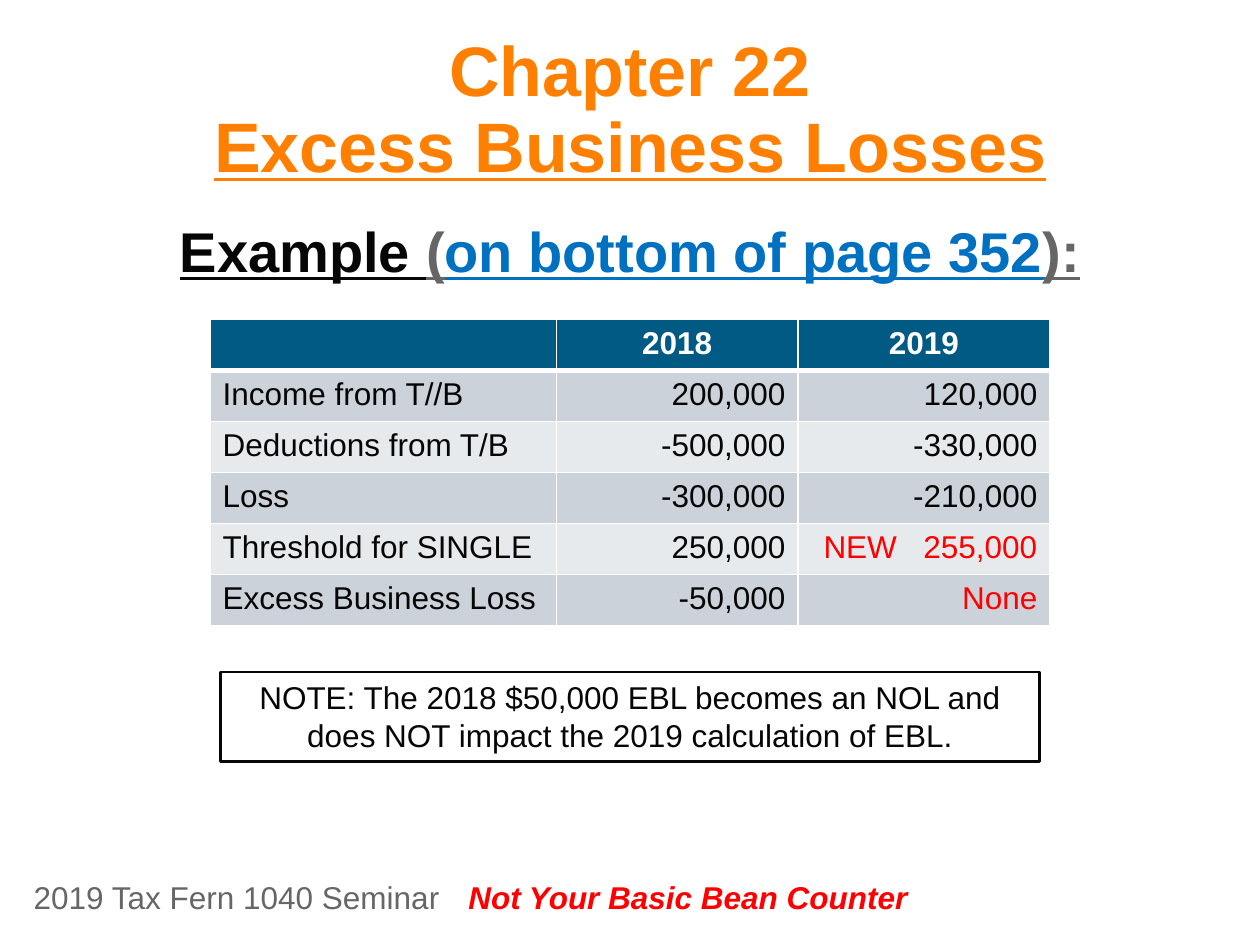
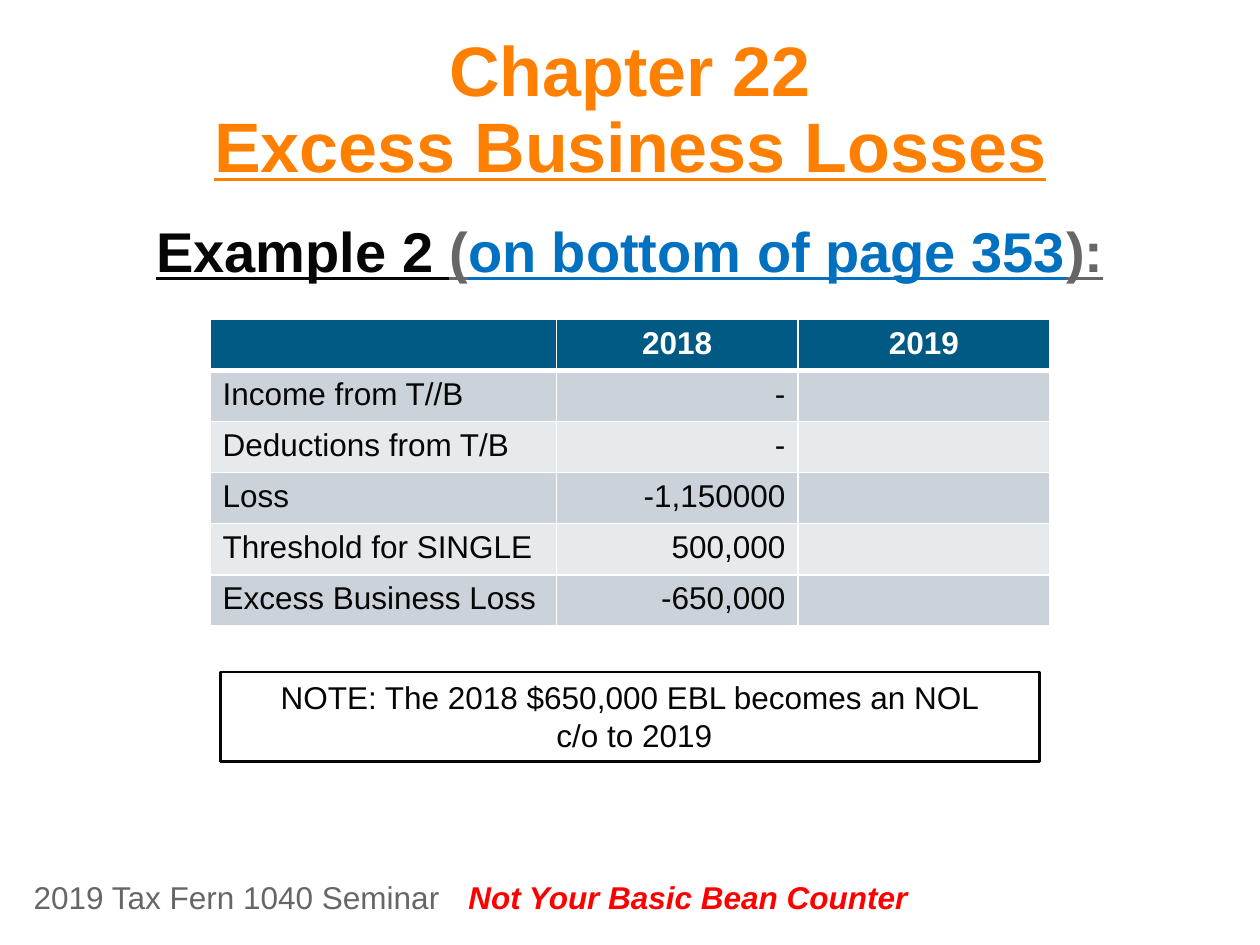
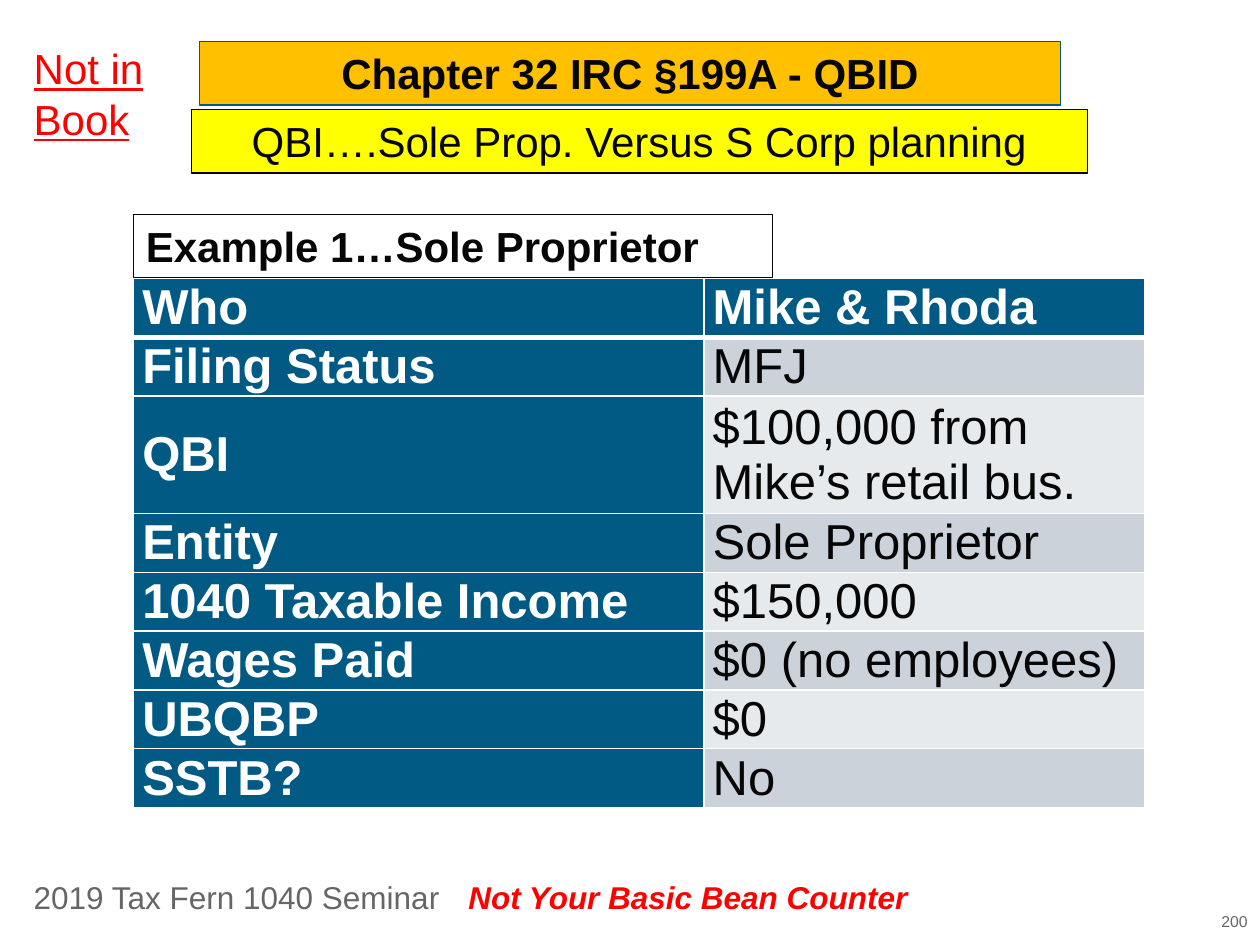
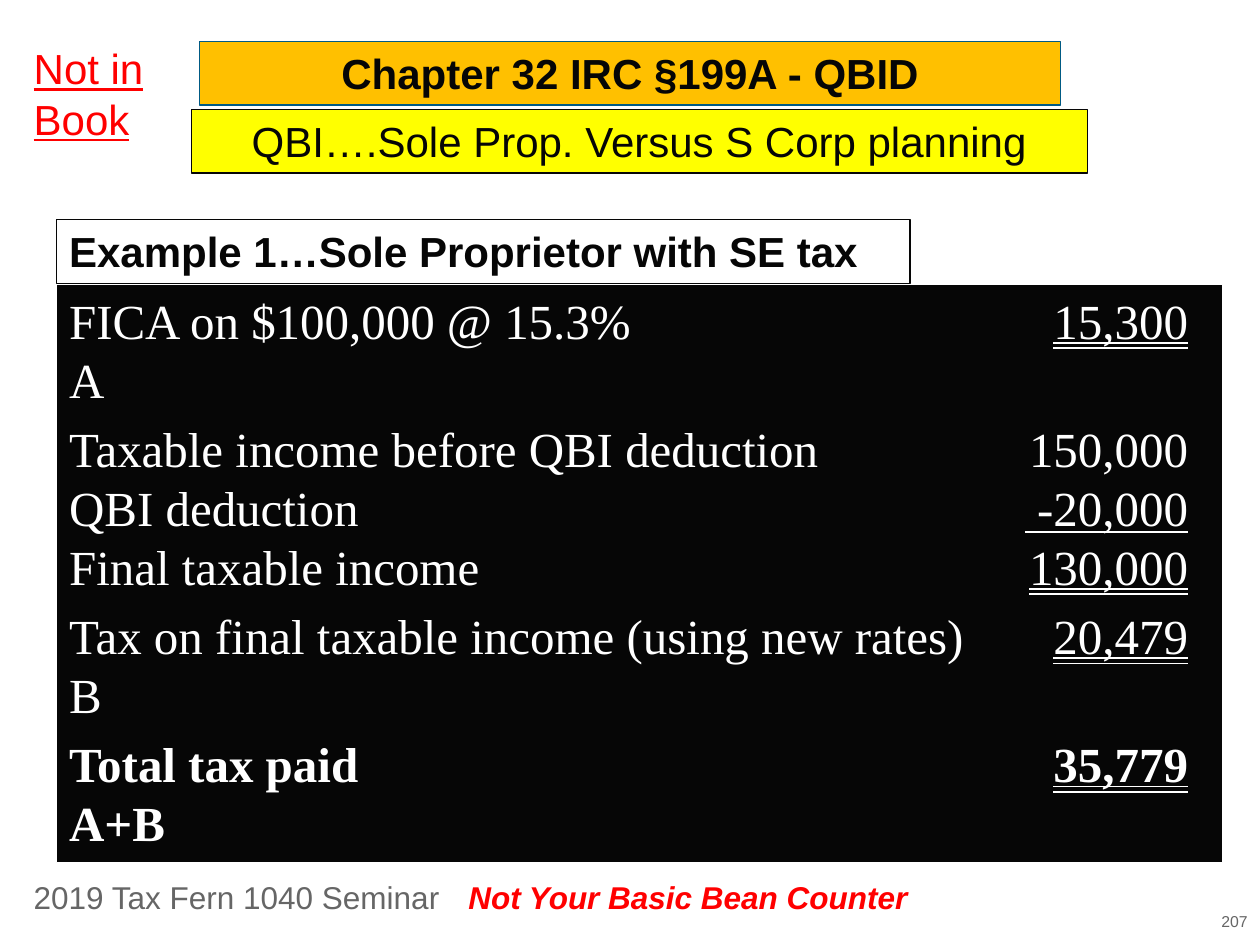
from itertools import cycle

from lxml import etree
from pptx import Presentation
from pptx.dml.color import RGBColor
from pptx.enum import shapes, text
from pptx.oxml import ns
from pptx.util import Pt

BLACK = RGBColor(0x06, 0x06, 0x06)
WHITE = RGBColor(0xFF, 0xFF, 0xFF)
GREY = RGBColor(0x66, 0x66, 0x66)
RED = RGBColor(0xFF, 0x00, 0x00)
ORANGE = RGBColor(0xFF, 0x80, 0x00)
AMBER = RGBColor(0xFF, 0xC0, 0x00)
YELLOW = RGBColor(0xFF, 0xFF, 0x00)
BLUE = RGBColor(0x00, 0x70, 0xC0)
NAVY = RGBColor(0x00, 0x5A, 0x84)
BAND_DARK = RGBColor(0xCC, 0xD2, 0xD9)
BAND_LIGHT = RGBColor(0xE7, 0xEA, 0xED)

LEFT, CENTER, RIGHT = (text.PP_ALIGN.LEFT, text.PP_ALIGN.CENTER,
                       text.PP_ALIGN.RIGHT)
TOP, MIDDLE, BOTTOM = (text.MSO_ANCHOR.TOP, text.MSO_ANCHOR.MIDDLE,
                       text.MSO_ANCHOR.BOTTOM)
SINGLE = text.MSO_UNDERLINE.SINGLE_LINE
DOUBLE = text.MSO_UNDERLINE.DOUBLE_LINE
TITLE_ONLY = 5


def add_run(paragraph, words, size=18, color=BLACK, font="Arial", bold=False,
            italic=False, underline=False):
    for number, line in enumerate(words.split("\n")):
        if number:
            paragraph.add_line_break()
        if line:
            run = paragraph.add_run()
            run.text = line
            run.font.name, run.font.size = font, Pt(size)
            run.font.color.rgb = color
            run.font.bold, run.font.italic = bold, italic
            run.font.underline = underline


def write(frame, *paragraphs, align=LEFT, after=(0,), spacing=None, tabs=(),
          **style):
    """Fill a text frame; a paragraph is a string or a list of (words, style)."""
    for number, (content, gap) in enumerate(zip(paragraphs, cycle(after))):
        paragraph = frame.add_paragraph() if number else frame.paragraphs[0]
        if tabs:
            stops = etree.SubElement(paragraph._p.get_or_add_pPr(),
                                     ns.qn("a:tabLst"))
            for position, kind in tabs:
                etree.SubElement(stops, ns.qn("a:tab"),
                                 pos=str(Pt(position)), algn=kind)
        paragraph.alignment = align
        paragraph.space_before, paragraph.space_after = Pt(0), Pt(gap)
        if spacing:
            paragraph.line_spacing = spacing
        runs = [(content, {})] if isinstance(content, str) else content
        for words, change in runs:
            add_run(paragraph, words, **{**style, **change})


def set_frame(shape, anchor=TOP, insets=(7.2, 3.6)):
    frame = shape.text_frame
    frame.word_wrap = True
    frame.auto_size = text.MSO_AUTO_SIZE.NONE
    frame.vertical_anchor = anchor
    frame.margin_left = frame.margin_right = Pt(insets[0])
    frame.margin_top = frame.margin_bottom = Pt(insets[1])
    return frame


def paint(shape, fill, line, width):
    if fill is None:
        shape.fill.background()
    else:
        shape.fill.solid()
        shape.fill.fore_color.rgb = fill
    shape.line.color.rgb, shape.line.width = line, Pt(width)


def add_label(slide, box, *paragraphs, **style):
    label = slide.shapes.add_textbox(*map(Pt, box))
    write(set_frame(label), *paragraphs, **style)


def add_panel(slide, box, *paragraphs, fill=None, line=BLACK, width=0.75,
              **style):
    panel = slide.shapes.add_shape(shapes.MSO_SHAPE.RECTANGLE, *map(Pt, box))
    panel.shadow.inherit = False
    paint(panel, fill, line, width)
    write(set_frame(panel), *paragraphs, **style)


def place_title(slide, box, *paragraphs, anchor=TOP, insets=(7.2, 3.6),
                **style):
    title = slide.shapes.title
    title.left, title.top, title.width, title.height = map(Pt, box)
    write(set_frame(title, anchor, insets), *paragraphs, align=CENTER,
          bold=True, **style)
    return title


def format_cell(cell, fill, top=1, bottom=1):
    """Give a cell white borders, then its fill, which must follow them."""
    properties = cell._tc.get_or_add_tcPr()
    for side, width in zip("LRTB", (1, 1, top, bottom)):
        border = etree.SubElement(properties, ns.qn(f"a:ln{side}"),
                                  w=str(Pt(width)))
        solid = etree.SubElement(border, ns.qn("a:solidFill"))
        etree.SubElement(solid, ns.qn("a:srgbClr"), val=str(WHITE))
    cell.fill.solid()
    cell.fill.fore_color.rgb = fill


def add_grid(slide, left, top, widths, heights, header_column=False):
    """Add a banded table with a navy header row, and return it."""
    table = slide.shapes.add_table(
        len(heights), len(widths), Pt(left), Pt(top),
        Pt(sum(widths)), Pt(sum(heights))).table
    table.first_col = header_column
    for column, width in zip(table.columns, widths):
        column.width = Pt(width)
    for r, height in enumerate(heights):
        table.rows[r].height = Pt(height)
        for c in range(len(widths)):
            if r == 0 or (header_column and c == 0):
                fill = NAVY
            else:
                fill = BAND_DARK if r % 2 else BAND_LIGHT
            format_cell(table.cell(r, c), fill, top=3 if r == 1 else 1,
                        bottom=1 if r else 3)
    return table


def new_slide(deck):
    """Add a title-only slide with the seminar footer."""
    slide = deck.slides.add_slide(deck.slide_layouts[TITLE_ONLY])
    add_label(slide, (12.2, 498.2, 246, 29), "2019 Tax Fern 1040 Seminar",
              color=GREY)
    add_label(slide, (260.6, 498.2, 268.6, 29), "Not Your Basic Bean Counter",
              color=RED, bold=True, italic=True)
    return slide


def add_loss_table(slide, left, top, amounts):
    labels = ("Income from T//B", "Deductions from T/B", "Loss",
              "Threshold for SINGLE", "Excess Business Loss")
    table = add_grid(slide, left, top, (198, 138, 144), [29.16] * 6)
    for c, year in enumerate(("2018", "2019"), start=1):
        write(table.cell(0, c).text_frame, year, align=CENTER, color=WHITE,
              bold=True)
    for r, (label, values) in enumerate(zip(labels, amounts), start=1):
        write(table.cell(r, 0).text_frame, label)
        for c, value in enumerate(values, start=1):
            is_new = "NEW" in value
            write(table.cell(r, c).text_frame, value,
                  align=LEFT if is_new else RIGHT,
                  tabs=((7.4, "l"), (129.5, "r")) if is_new else (),
                  color=RED if is_new or value == "None" else BLACK)


def losses_slide(deck, example, page, amounts, *note):
    slide = new_slide(deck)
    place_title(slide, (48, 12, 624, 95),
                [("Chapter 22\n", {}),
                 ("Excess Business Losses", {"underline": SINGLE})],
                anchor=BOTTOM, insets=(0, 0), spacing=0.9, size=40,
                color=ORANGE)
    add_label(slide, (57, 120, 606, 46),
              [(f"{example} ", {}), ("(", {"color": GREY}),
               (f"on bottom of page {page}", {"color": BLUE}),
               ("):", {"color": GREY})],
              align=CENTER, size=32, bold=True, underline=SINGLE)
    add_loss_table(slide, 120, 182.5, amounts)
    add_panel(slide, (126, 384, 468, 51), *note, width=1.5, align=CENTER)


def planning_slide(deck, number, example, example_box):
    """Add a chapter 32 slide with its bands and boxed example heading."""
    slide = new_slide(deck)
    title = place_title(slide, (114, 23.7, 492, 36.4),
                        "Chapter 32 IRC §199A - QBID", size=24)
    paint(title, AMBER, NAVY, 0.75)
    add_panel(slide, (109.3, 62.6, 512, 36.4),
              "QBI….Sole Prop. Versus S Corp planning", fill=YELLOW,
              align=CENTER, size=24)
    add_label(slide, (12.2, 21, 78, 65.5), "Not in Book", size=24, color=RED,
              underline=SINGLE)
    add_label(slide, (646, 517.7, 74, 22.3), number, align=RIGHT, size=9,
              color=GREY)
    add_panel(slide, example_box, example, size=24, bold=True)
    return slide


def add_facts_table(slide, left, top):
    facts = (("Who", "Mike & Rhoda"), ("Filing Status", "MFJ"),
             ("QBI", "$100,000 from Mike’s retail bus."),
             ("Entity", "Sole Proprietor"),
             ("1040 Taxable Income", "$150,000"),
             ("Wages Paid", "$0 (no employees)"), ("UBQBP", "$0"),
             ("SSTB?", "No"))
    line = 33.6
    heights = [2 * line if name == "QBI" else line for name, _ in facts]
    table = add_grid(slide, left, top, (326, 252), heights, header_column=True)
    for r, fact in enumerate(facts):
        for c, words in enumerate(fact):
            cell = table.cell(r, c)
            cell.vertical_anchor = MIDDLE
            cell.margin_left = cell.margin_right = Pt(5)
            cell.margin_top = cell.margin_bottom = Pt(0)
            heading = r == 0 or c == 0
            write(cell.text_frame, words, size=28, bold=heading,
                  color=WHITE if heading else BLACK)


def add_tax_panel(slide, box):
    # label, amount, underline, reference below the label, space after
    entries = (
        ("FICA on $100,000 @ 15.3%", "15,300", DOUBLE, "A", 6),
        ("Taxable income before QBI deduction", "150,000", False, "", 0),
        ("QBI deduction", " -20,000", SINGLE, "", 0),
        ("Final taxable income", "130,000", DOUBLE, "", 6),
        ("Tax on final taxable income (using new rates)", "20,479", DOUBLE,
         "B", 6),
        ("Total tax paid", "35,779", DOUBLE, "A+B", 6))
    paragraphs = []
    for label, amount, underline, reference, _ in entries:
        bold = label.startswith("Total")
        runs = [(f"{label}\t", {"bold": bold}),
                (amount, {"bold": bold, "underline": underline})]
        if reference:
            runs.append((f"\n{reference}", {"bold": bold}))
        paragraphs.append(runs)
    add_panel(slide, box, *paragraphs, fill=BLACK, line=WHITE,
              after=[entry[-1] for entry in entries], tabs=((639.4, "r"),),
              size=28, color=WHITE, font="Times New Roman")


def main():
    deck = Presentation()
    deck.slide_width, deck.slide_height = Pt(720), Pt(540)
    losses_slide(
        deck, "Example", 352,
        (("200,000", "120,000"), ("-500,000", "-330,000"),
         ("-300,000", "-210,000"), ("250,000", "\tNEW\t255,000"),
         ("-50,000", "None")),
        "NOTE: The 2018 $50,000 EBL becomes an NOL and does NOT impact "
        "the 2019 calculation of EBL.")
    losses_slide(
        deck, "Example 2", 353,
        (("-", ""), ("-", ""), ("-1,150000", ""), ("500,000", ""),
         ("-650,000", "")),
        "NOTE: The 2018 $650,000 EBL becomes an NOL", " c/o to 2019")
    facts = planning_slide(deck, "200", "Example 1…Sole Proprietor",
                           (76.3, 122.4, 365, 36.4))
    add_facts_table(facts, 76.3, 159.1)
    taxes = planning_slide(deck, "207", "Example 1…Sole Proprietor with SE tax",
                           (32.4, 125.6, 487.7, 36.4))
    add_tax_panel(taxes, (32.4, 162.4, 666, 330.5))
    deck.save("out.pptx")


if __name__ == "__main__":
    main()
